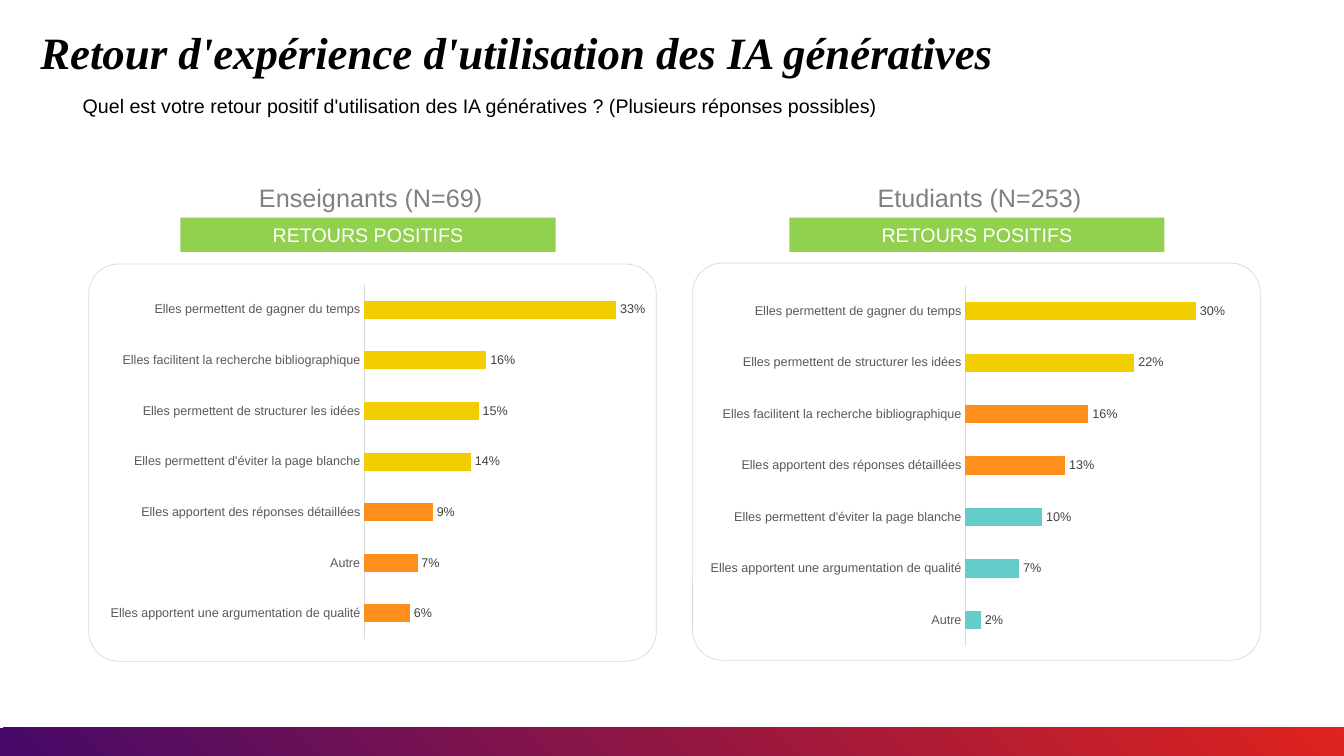
"""Build the slide comparing positive feedback on generative AI."""
from lxml import etree
from pptx import Presentation
from pptx.chart.data import CategoryChartData
from pptx.dml.color import RGBColor
from pptx.enum.chart import XL_CHART_TYPE as CT, XL_LABEL_POSITION as LP, XL_TICK_MARK as TM
from pptx.enum.shapes import MSO_SHAPE as SHAPE
from pptx.enum.text import MSO_ANCHOR as ANCHOR, PP_ALIGN as ALIGN
from pptx.oxml import parse_xml
from pptx.util import Inches, Pt

BLACK = RGBColor(0x00, 0x00, 0x00)
WHITE = RGBColor(0xFF, 0xFF, 0xFF)
GREY = RGBColor(0x80, 0x80, 0x80)
AXIS_TEXT = RGBColor(0x59, 0x59, 0x59)
LABEL_TEXT = RGBColor(0x40, 0x40, 0x40)
RULE = RGBColor(0xD9, 0xD9, 0xD9)
GREEN = RGBColor(0x92, 0xD0, 0x50)
YELLOW = RGBColor(0xF2, 0xCD, 0x00)
ORANGE = RGBColor(0xFF, 0x8F, 0x1C)
TEAL = RGBColor(0x64, 0xCC, 0xC9)

TITLE = "Retour d'expérience d'utilisation des IA génératives"
QUESTION = ("Quel est votre retour positif d'utilisation des IA génératives ? "
            "(Plusieurs réponses possibles)")
BANNER = "RETOURS POSITIFS"

TIME = "Elles permettent de gagner du temps"
BIBLIO = "Elles facilitent la recherche bibliographique"
IDEAS = "Elles permettent de structurer les idées"
BLANK_PAGE = "Elles permettent d'éviter la page blanche"
DETAILS = "Elles apportent des réponses détaillées"
QUALITY = "Elles apportent une argumentation de qualité"
OTHER = "Autre"

PANELS = [
    {"heading": "Enseignants (N=69)", "heading_x": 2.47, "align": ALIGN.LEFT,
     "banner_x": 1.79, "card": (0.88, 2.62), "chart": (0.99, 2.75, 5.41, 3.66),
     "answers": [(TIME, 0.33, YELLOW), (BIBLIO, 0.16, YELLOW), (IDEAS, 0.15, YELLOW),
                 (BLANK_PAGE, 0.14, YELLOW), (DETAILS, 0.09, ORANGE),
                 (OTHER, 0.07, ORANGE), (QUALITY, 0.06, ORANGE)]},
    {"heading": "Etudiants (N=253)", "heading_x": 8.41, "align": ALIGN.CENTER,
     "banner_x": 7.83, "card": (6.87, 2.61), "chart": (6.94, 2.76, 5.41, 3.72),
     "answers": [(TIME, 0.30, YELLOW), (IDEAS, 0.22, YELLOW), (BIBLIO, 0.16, ORANGE),
                 (DETAILS, 0.13, ORANGE), (BLANK_PAGE, 0.10, TEAL),
                 (QUALITY, 0.07, TEAL), (OTHER, 0.02, TEAL)]},
]

FOOTER_GRADIENT = """
<a:gradFill xmlns:a="http://schemas.openxmlformats.org/drawingml/2006/main" rotWithShape="1">
  <a:gsLst>
    <a:gs pos="0"><a:srgbClr val="DF231D"/></a:gs>
    <a:gs pos="99000"><a:srgbClr val="470A68"/></a:gs>
  </a:gsLst>
  <a:path path="circle"><a:fillToRect l="100000" b="100000"/></a:path>
</a:gradFill>"""


def style_font(font, size, color, name="Arial"):
    font.size, font.name = Pt(size), name
    font.color.rgb = color


def write(sp, text, size, color, align=ALIGN.LEFT, name="Arial"):
    tf = sp.text_frame
    tf.word_wrap = True
    p = tf.paragraphs[0]
    p.text, p.alignment = text, align
    style_font(p.runs[0].font, size, color, name)
    return tf


def add_text(slide, box, *args, **kwargs):
    sp = slide.shapes.add_textbox(*map(Inches, box))
    return write(sp, *args, **kwargs)


def add_box(slide, kind, box, fill=None):
    sp = slide.shapes.add_shape(kind, *map(Inches, box))
    sp.shadow.inherit = False
    sp.line.fill.background()
    if fill is None:
        sp.fill.background()
    else:
        sp.fill.solid()
        sp.fill.fore_color.rgb = fill
    return sp


def add_bars(slide, box, answers):
    rows = answers[::-1]
    data = CategoryChartData(number_format="0%")
    data.categories = [label for label, _, _ in rows]
    data.add_series("Series 1", [value for _, value, _ in rows])
    chart = slide.shapes.add_chart(CT.BAR_CLUSTERED, *map(Inches, box), data).chart
    chart.has_legend = chart.has_title = False
    style_font(chart.font, 10, BLACK)

    cats, vals = chart.category_axis, chart.value_axis
    cats.major_tick_mark = cats.minor_tick_mark = TM.NONE
    style_font(cats.tick_labels.font, 9, AXIS_TEXT)
    cats.format.line.color.rgb = RULE
    cats.format.line.width = Pt(0.75)
    vals.has_major_gridlines = vals.visible = False
    vals.minimum_scale, vals.maximum_scale = 0, 0.35

    plot = chart.plots[0]
    plot.gap_width, plot.vary_by_categories = 182, False
    series = plot.series[0]
    for i, (_, _, color) in enumerate(rows):
        fill = series.points[i].format.fill
        fill.solid()
        fill.fore_color.rgb = color
    labels = series.data_labels
    labels.show_value, labels.position = True, LP.OUTSIDE_END
    labels.number_format, labels.number_format_is_linked = "0%", False
    style_font(labels.font, 9, LABEL_TEXT)


def add_panel(slide, panel):
    card = add_box(slide, SHAPE.ROUNDED_RECTANGLE, (*panel["card"], 5.63, 3.94))
    card.adjustments[0] = 0.075
    card.line.color.rgb = RULE
    card.line.width = Pt(0.5)
    add_bars(slide, panel["chart"], panel["answers"])
    add_text(slide, (panel["heading_x"], 1.76, 2.61, 0.4), panel["heading"], 18, GREY,
             panel["align"])
    banner = add_box(slide, SHAPE.RECTANGLE, (panel["banner_x"], 2.16, 3.72, 0.34), GREEN)
    write(banner, BANNER, 14, WHITE, ALIGN.CENTER).vertical_anchor = ANCHOR.MIDDLE


def main():
    prs = Presentation()
    prs.slide_width, prs.slide_height = Inches(13.33), Inches(7.5)
    slide = prs.slides.add_slide(prs.slide_layouts[6])

    footer = add_box(slide, SHAPE.RECTANGLE, (0, 7.22, 13.33, 0.28))
    props = footer.fill._xPr
    props.replace(props.find("{*}noFill"), parse_xml(etree.tostring(etree.fromstring(FOOTER_GRADIENT))))

    tf = add_text(slide, (0.4, 0.31, 12.31, 1.01), TITLE, 32, BLACK, name="Times New Roman")
    tf.margin_left = tf.margin_top = tf.margin_right = tf.margin_bottom = 0
    p = tf.paragraphs[0]
    p.line_spacing = 0.9
    p.runs[0].font.bold = p.runs[0].font.italic = True

    tf = add_text(slide, (0.67, 0.88, 8.4, 0.34), QUESTION, 14, BLACK)
    tf.margin_left = Inches(0.15)

    for panel in PANELS:
        add_panel(slide, panel)
    prs.save("out.pptx")


if __name__ == "__main__":
    main()
